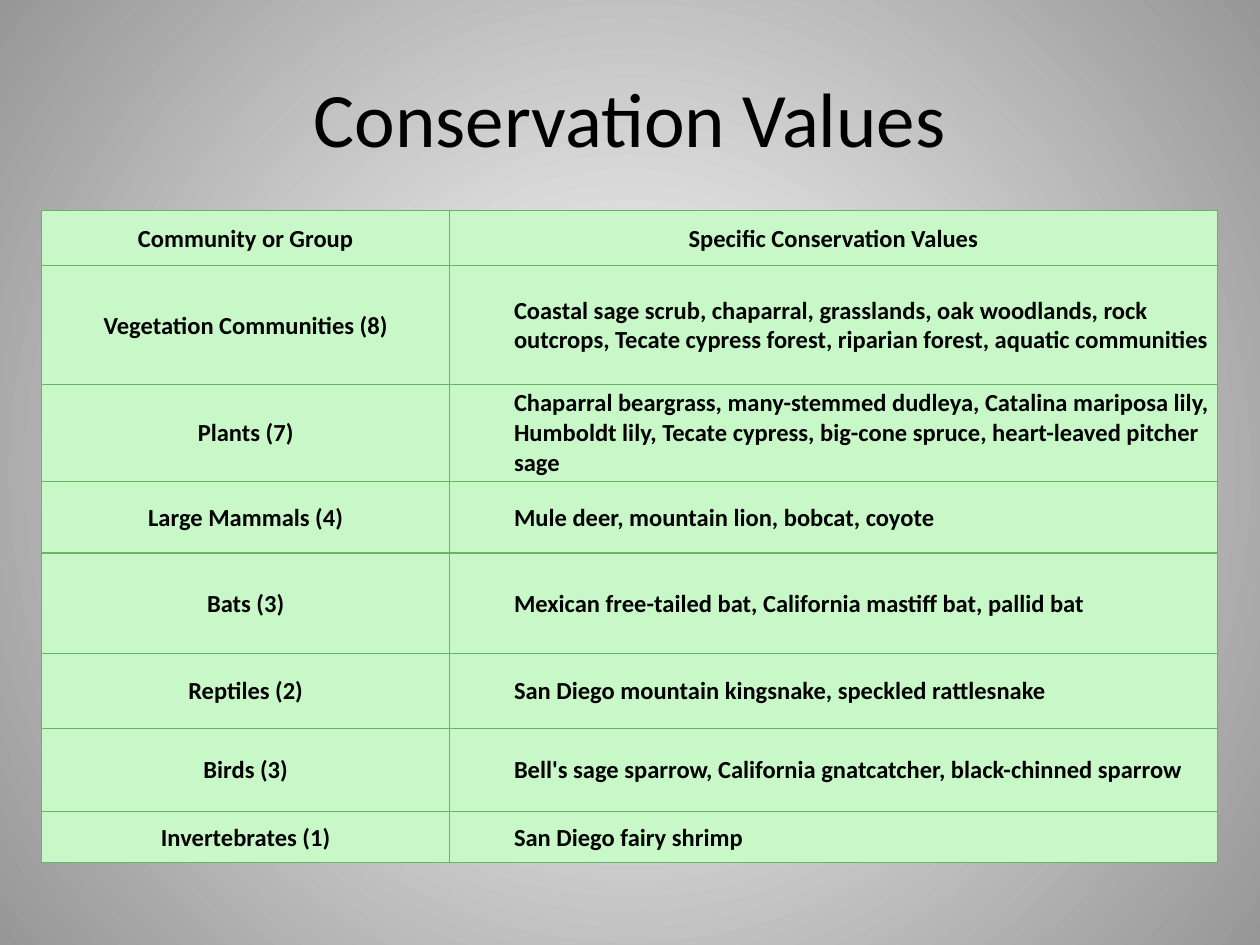
from pptx import Presentation
from pptx.dml.color import RGBColor
from pptx.enum.text import MSO_ANCHOR, PP_ALIGN
from pptx.oxml import parse_xml
from pptx.oxml.ns import nsdecls, qn
from pptx.util import Inches, Pt

BLACK = RGBColor(0x00, 0x00, 0x00)
WHITE = RGBColor(0xFF, 0xFF, 0xFF)
GRAY = RGBColor(0x97, 0x97, 0x97)
LIGHT_GREEN = RGBColor(0xC8, 0xF7, 0xC8)
BORDER_GREEN = RGBColor(0x67, 0xB5, 0x69)
FONT = "Calibri"

ROWS = [
    (0.44, "Community or Group", "Specific Conservation Values"),
    (0.94, "Vegetation Communities (8)",
     "Coastal sage scrub, chaparral, grasslands, oak woodlands, rock outcrops, "
     "Tecate cypress forest, riparian forest, aquatic communities"),
    (0.77, "Plants (7)",
     "Chaparral beargrass, many-stemmed dudleya, Catalina mariposa lily, "
     "Humboldt lily, Tecate cypress, big-cone spruce, heart-leaved pitcher sage"),
    (0.57, "Large Mammals (4)", "Mule deer, mountain lion, bobcat, coyote"),
    (0.8, "Bats (3)", "Mexican free-tailed bat, California mastiff bat, pallid bat"),
    (0.59, "Reptiles (2)", "San Diego mountain kingsnake, speckled rattlesnake"),
    (0.66, "Birds (3)",
     "Bell's sage sparrow, California gnatcatcher, black-chinned sparrow"),
    (0.41, "Invertebrates (1)", "San Diego fairy shrimp"),
]
COLUMN_WIDTHS = [3.24, 6.09]


def format_runs(paragraph, size, bold):
    for run in paragraph.runs:
        run.font.name = FONT
        run.font.size = Pt(size)
        run.font.bold = bold
        run.font.color.rgb = BLACK


def add_borders(cell):
    properties = cell._tc.get_or_add_tcPr()
    for index, side in enumerate(("lnL", "lnR", "lnT", "lnB")):
        line = parse_xml(
            f'<a:{side} {nsdecls("a")} w="{Pt(0.75)}"><a:solidFill>'
            f'<a:srgbClr val="{BORDER_GREEN}"/></a:solidFill></a:{side}>')
        properties.insert(index, line)


presentation = Presentation()
presentation.slide_width = Inches(10)
presentation.slide_height = Inches(7.5)
slide = presentation.slides.add_slide(presentation.slide_layouts[5])

# Background: radial gradient from a white centre
background_fill = slide.background.fill
background_fill.gradient()
for stop, color, position in zip(background_fill.gradient_stops, (WHITE, GRAY), (0, 1)):
    stop.color.rgb = color
    stop.position = position
gradient = slide.element.find(".//" + qn("a:gradFill"))
gradient.replace(gradient.find(qn("a:lin")), parse_xml(
    f'<a:path {nsdecls("a")} path="circle">'
    '<a:fillToRect l="50000" t="50000" r="50000" b="50000"/></a:path>'))

# Title
title = slide.shapes.title
title.left, title.top = Inches(0.5), Inches(0.3)
title.width, title.height = Inches(9), Inches(1.25)
title.text_frame.text = "Conservation Values"
title.text_frame.vertical_anchor = MSO_ANCHOR.MIDDLE
title.text_frame.paragraphs[0].alignment = PP_ALIGN.CENTER
format_runs(title.text_frame.paragraphs[0], 44, False)

# Table of conservation values
table = slide.shapes.add_table(
    len(ROWS), len(COLUMN_WIDTHS), Inches(0.33), Inches(1.67),
    Inches(sum(COLUMN_WIDTHS)), Inches(sum(row[0] for row in ROWS))).table
table.first_row = False
table.horz_banding = False
for column, width in zip(table.columns, COLUMN_WIDTHS):
    column.width = Inches(width)

for row_index, (height, *texts) in enumerate(ROWS):
    table.rows[row_index].height = Inches(height)
    for column_index, text in enumerate(texts):
        cell = table.cell(row_index, column_index)
        cell.fill.solid()
        cell.fill.fore_color.rgb = LIGHT_GREEN
        cell.vertical_anchor = MSO_ANCHOR.MIDDLE
        cell.margin_left = cell.margin_right = cell.margin_top = Inches(0.01)
        cell.margin_bottom = 0
        add_borders(cell)

        paragraph = cell.text_frame.paragraphs[0]
        paragraph.text = text
        format_runs(paragraph, 14, True)
        if row_index == 0 or column_index == 0:
            paragraph.alignment = PP_ALIGN.CENTER
        else:
            # Lists of species are indented one level
            paragraph.alignment = PP_ALIGN.LEFT
            paragraph.level = 1
            paragraph_properties = paragraph._p.get_or_add_pPr()
            paragraph_properties.set("marL", str(Inches(0.5)))
            paragraph_properties.set("indent", "0")

presentation.save("out.pptx")
